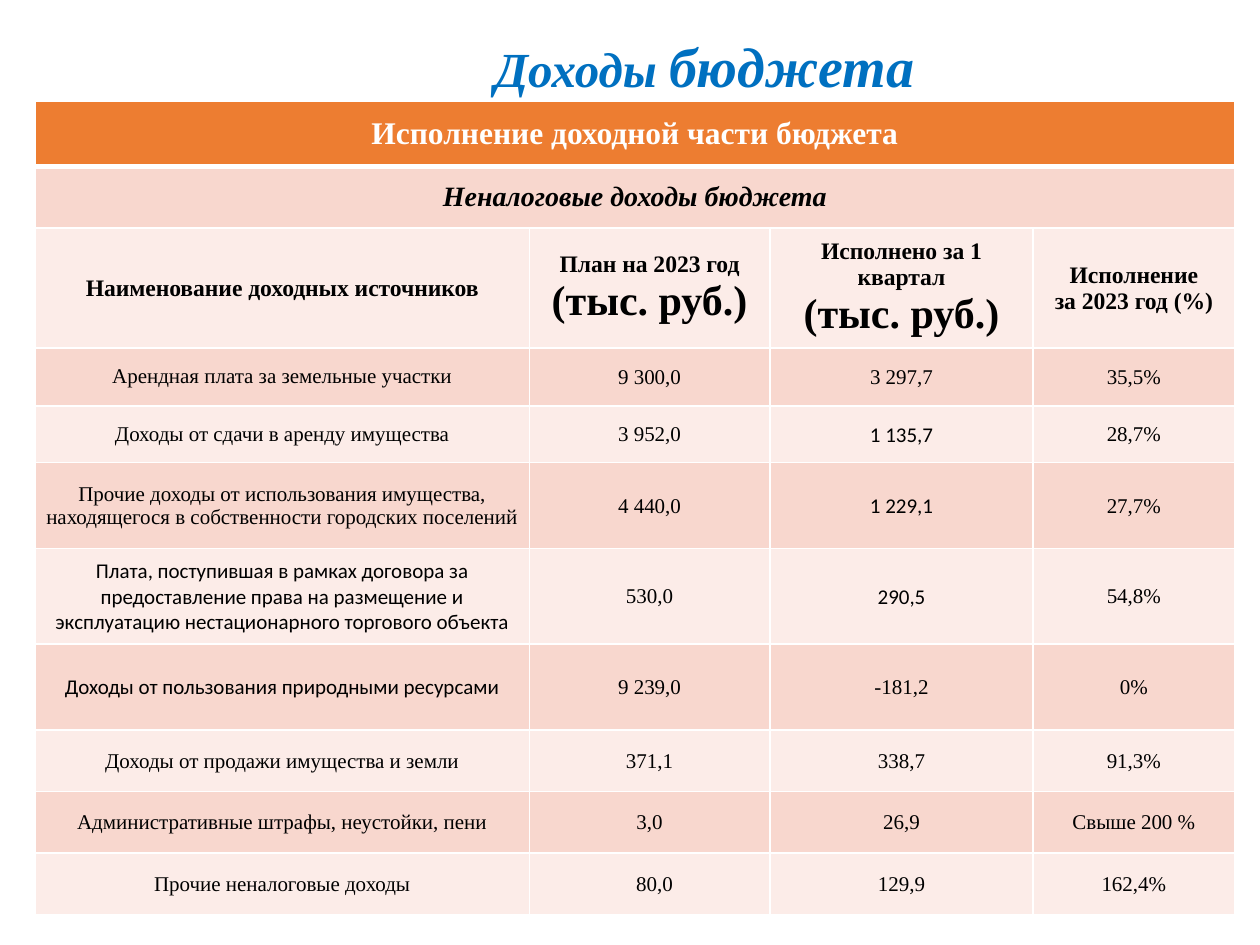
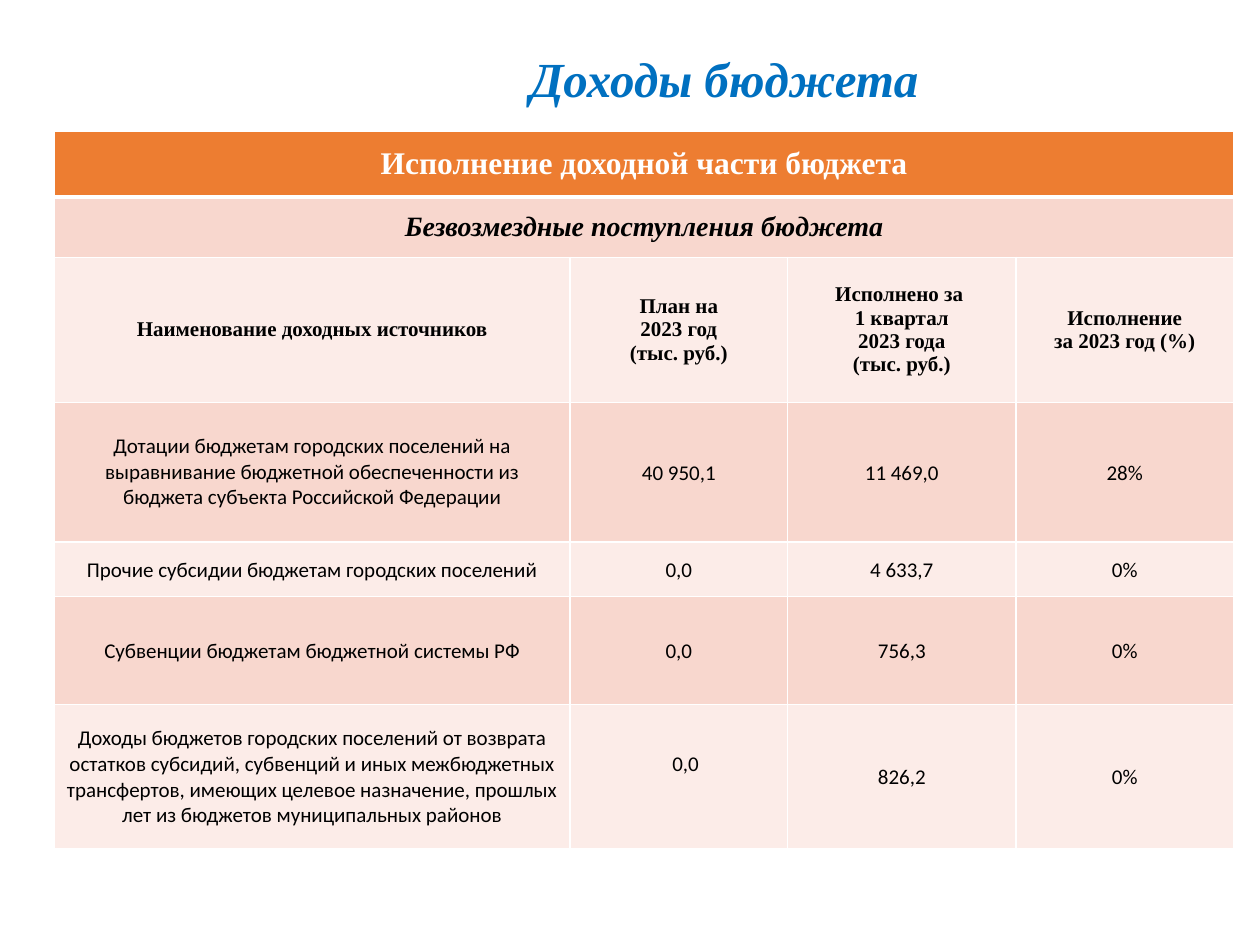
from lxml import etree
from pptx import Presentation
from pptx.dml.color import RGBColor
from pptx.enum import text
from pptx.oxml.ns import qn
from pptx.util import Cm, Pt

# Shared look
BLUE = RGBColor(0x00, 0x70, 0xC0)
ORANGE = RGBColor(0xED, 0x7D, 0x31)
PINK = RGBColor(0xF8, 0xD7, 0xCE)
PALE = RGBColor(0xFC, 0xEC, 0xE8)
WHITE = RGBColor(0xFF, 0xFF, 0xFF)
BLACK = RGBColor(0x00, 0x00, 0x00)
SERIF, SANS = "Times New Roman", "Calibri"
TABLE_TITLE = "Исполнение доходной части бюджета"
UNIT = "(тыс. руб.)"

# Texts: "\n" starts a paragraph, "\v" breaks a line
NON_TAX_HEADS = ["Наименование доходных источников", "План на 2023 год\n" + UNIT,
                 "Исполнено за 1 квартал\n" + UNIT, "Исполнение\vза 2023 год (%)"]
NON_TAX_ROWS = [
    ["Арендная плата за земельные участки", "9 300,0", "3 297,7", "35,5%"],
    ["Доходы от сдачи в аренду имущества", "3 952,0", "1 135,7", "28,7%"],
    ["Прочие доходы от использования имущества, находящегося в собственности "
     "городских поселений", "4 440,0", "1 229,1", "27,7%"],
    ["Плата, поступившая в рамках договора за предоставление права на размещение и "
     "эксплуатацию нестационарного торгового объекта", "530,0", "290,5", "54,8%"],
    ["Доходы от пользования природными ресурсами", "9 239,0", "-181,2", "0%"],
    ["Доходы от продажи имущества и земли", "371,1", "338,7", "91,3%"],
    ["Административные штрафы, неустойки, пени", "3,0", "26,9", "Свыше 200 %"],
    ["Прочие неналоговые доходы", "80,0", "129,9", "162,4%"],
]
NON_TAX_SANS = {(1, 2), (2, 2), (3, 0), (3, 2), (4, 0)}

GRANT_HEADS = ["Наименование доходных источников", "План на\n2023 год\n" + UNIT,
               "Исполнено за \v1 квартал\n2023 года\n" + UNIT,
               "Исполнение\vза 2023 год (%)"]
GRANT_ROWS = [
    ["Дотации бюджетам городских поселений на выравнивание бюджетной обеспеченности "
     "из бюджета субъекта Российской Федерации", "40 950,1", "11 469,0", "28%"],
    ["Прочие субсидии бюджетам городских поселений", "0,0", "4 633,7", "0%"],
    ["Субвенции бюджетам бюджетной системы РФ", "0,0", "756,3", "0%"],
    ["Доходы бюджетов городских поселений от возврата остатков субсидий, субвенций и "
     "иных межбюджетных трансфертов, имеющих целевое назначение, прошлых лет из "
     "бюджетов муниципальных районов", "0,0", "826,2", "0%"],
]
GRANT_SANS = {(r, c) for r in range(len(GRANT_ROWS)) for c in range(4)}


def set_font(font, color=BLACK, **values):
    for name, value in values.items():
        setattr(font, name, value)
    font.color.rgb = color


def add_title(s, left, top, height, runs):
    """Format the title placeholder; runs are (text, size) pairs."""
    sp = s.shapes.title
    sp.left, sp.top, sp.width, sp.height = Cm(left), Cm(top), Cm(9.4), Cm(height)
    tf = sp.text_frame
    tf.word_wrap = True
    tf.auto_size = text.MSO_AUTO_SIZE.SHAPE_TO_FIT_TEXT
    tf.vertical_anchor = text.MSO_ANCHOR.TOP
    p = tf.paragraphs[0]
    p.alignment = text.PP_ALIGN.CENTER
    for words, size in runs:
        r = p.add_run()
        r.text = words
        set_font(r.font, BLUE, name=SERIF, size=Pt(size), bold=True, italic=True)


def set_borders(cell, bottom):
    """White lines around a cell, with the bottom width given in points."""
    tc_pr = cell._tc.get_or_add_tcPr()
    for side, width in (("L", 1), ("R", 1), ("T", 1), ("B", bottom)):
        ln = etree.SubElement(tc_pr, qn("a:ln" + side), w=str(Pt(width)))
        fill = etree.SubElement(ln, qn("a:solidFill"))
        etree.SubElement(fill, qn("a:srgbClr"), val=str(WHITE))


def fill_cell(cell, words, color=BLACK, unit_size=None, **font):
    cell.vertical_anchor = text.MSO_ANCHOR.MIDDLE
    tf = cell.text_frame
    for i, line in enumerate(words.split("\n")):
        p = tf.add_paragraph() if i else tf.paragraphs[0]
        p.text = line
        p.alignment = text.PP_ALIGN.CENTER
        size = unit_size if unit_size and line == UNIT else font["size"]
        for r in p.runs:
            set_font(r.font, color, **{**font, "size": Pt(size)})


def add_budget_table(s, left, top, cols, heights, subtitle, heads, rows, sans,
                     head_size, unit_size=None, wide_margin=()):
    frame = s.shapes.add_table(len(heights), len(cols), Cm(left), Cm(top),
                               Cm(sum(cols)), Cm(sum(heights)))
    table = frame.table
    for col, width in zip(table.columns, cols):
        col.width = Cm(width)
    for row, height in zip(table.rows, heights):
        row.height = Cm(height)

    # Bands and borders
    for i, row in enumerate(table.rows):
        for cell in row.cells:
            set_borders(cell, 1 if i else 3)
            cell.fill.solid()
            cell.fill.fore_color.rgb = (PINK if i % 2 else PALE) if i else ORANGE

    # Two merged headings and the column heads
    for i in range(2):
        table.cell(i, 0).merge(table.cell(i, len(cols) - 1))
    fill_cell(table.cell(0, 0), TABLE_TITLE, WHITE, name=SERIF, size=18, bold=True)
    fill_cell(table.cell(1, 0), subtitle, name=SERIF, size=16, bold=True, italic=True)
    for c, head in enumerate(heads):
        fill_cell(table.cell(2, c), head, unit_size=unit_size,
                  name=SERIF, size=head_size, bold=True)

    # Income sources
    for r, values in enumerate(rows):
        for c, value in enumerate(values):
            cell = table.cell(r + 3, c)
            if (r, c) != (0, 0):
                cell.margin_left = cell.margin_right = cell.margin_top = Cm(0.03)
                cell.margin_bottom = 0
            fill_cell(cell, value, name=SANS if (r, c) in sans else SERIF,
                      size=12, bold=False)
    for r, c, side, margin in wide_margin:
        setattr(table.cell(r + 3, c), "margin_" + side, Cm(margin))


def main():
    prs = Presentation()
    prs.slide_width, prs.slide_height = Cm(25.4), Cm(19.05)
    layout = prs.slide_layouts[5]

    # Non-tax income
    s = prs.slides.add_slide(layout)
    add_budget_table(s, 0.71, 2.04, [9.96, 4.85, 5.31, 4.06],
                     [1.32, 1.24, 1.88, 1.17, 1.14, 1.73, 1.93, 1.73] + [1.24] * 3,
                     "Неналоговые доходы бюджета", NON_TAX_HEADS, NON_TAX_ROWS,
                     NON_TAX_SANS, 13.5, 24, [(7, 1, "left", 0.23)])
    add_title(s, 9.5, 0.5, 1.62, [("Доходы ", 28), ("бюджета", 32)])

    # Grants and transfers
    s = prs.slides.add_slide(layout)
    add_budget_table(s, 1.1, 2.65, [10.39, 4.39, 4.6, 4.39],
                     [1.32, 1.22, 2.92, 2.82, 1.09, 2.18, 2.9],
                     "Безвозмездные поступления бюджета", GRANT_HEADS, GRANT_ROWS,
                     GRANT_SANS, 12,
                     wide_margin=[(3, 1, "left", 0.3), (3, 1, "bottom", 0.5)])
    add_title(s, 9.9, 0.85, 1.45, [("Доходы бюджета", 28)])

    prs.save("out.pptx")


if __name__ == "__main__":
    main()
